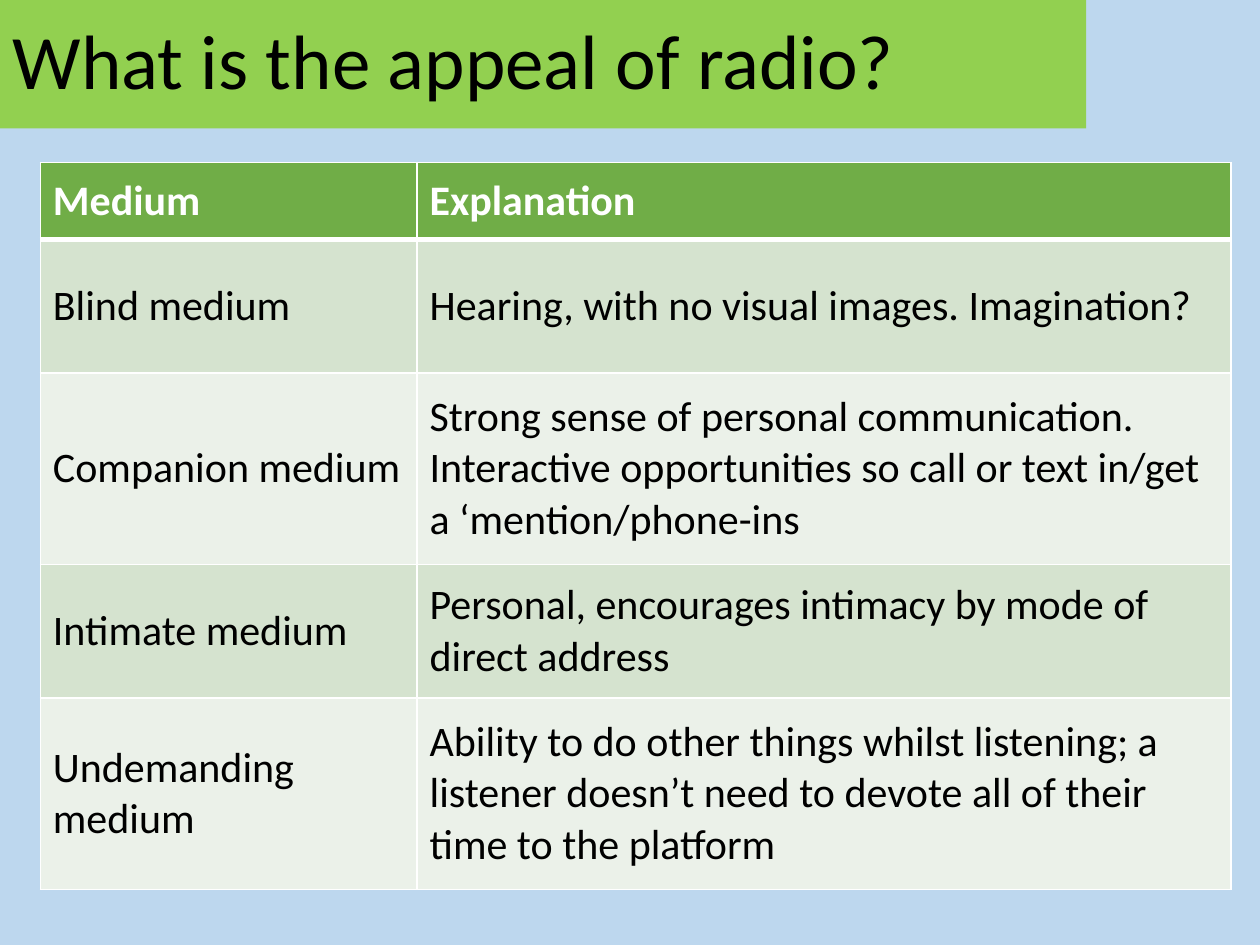
from dataclasses import dataclass

from lxml import etree
from pptx import Presentation
from pptx.dml.color import RGBColor
from pptx.enum.text import MSO_ANCHOR, MSO_AUTO_SIZE, PP_ALIGN
from pptx.oxml.ns import qn
from pptx.util import Inches, Pt

MIDDLE = MSO_ANCHOR.MIDDLE
LEFT = PP_ALIGN.LEFT
TITLE_ONLY = 5

# Content
TITLE = "What is the appeal of radio?"
ROWS = [
    ("Medium", "Explanation"),
    ("Blind medium", "Hearing, with no visual images. Imagination?"),
    ("Companion medium",
     "Strong sense of personal communication. Interactive opportunities "
     "so call or text in/get a ‘mention/phone-ins"),
    ("Intimate medium",
     "Personal, encourages intimacy by mode of direct address"),
    ("Undemanding medium",
     "Ability to do other things whilst listening; a listener doesn’t need "
     "to devote all of their time to the platform"),
]

# Layout in inches
SLIDE = (10, 7.5)
BANNER = (0, 0, 8.62, 1.02)
ORIGIN = (0.32, 1.29)
COLS = (2.99, 6.46)
SHORT, TALL = 1.06, 1.52
HEIGHTS = (0.61, SHORT, TALL, SHORT, TALL)


@dataclass(frozen=True)
class Theme:
    font: str = "Calibri"
    back: str = "BDD7EE"
    banner: str = "92D050"
    head: str = "70AD47"
    bands: tuple = ("D5E3CF", "EBF1E9")
    light: str = "FFFFFF"
    dark: str = "000000"
    title: int = 44
    body: int = 24
    thin: int = 1
    thick: int = 3


THEME = Theme()


def paint(fill, color):
    fill.solid()
    fill.fore_color.rgb = RGBColor.from_string(color)


def style(para, size, color, bold=False):
    para.alignment = LEFT
    font = para.font
    font.name, font.size, font.bold = THEME.font, Pt(size), bold
    font.color.rgb = RGBColor.from_string(color)


def edge(cell, side, width):
    line = etree.SubElement(cell._tc.get_or_add_tcPr(), qn(f"a:ln{side}"),
                            w=str(Pt(width)))
    solid = etree.SubElement(line, qn("a:solidFill"))
    etree.SubElement(solid, qn("a:srgbClr"), val=THEME.light)


def add_title(slide):
    title = slide.shapes.title
    title.left, title.top, title.width, title.height = map(Inches, BANNER)
    paint(title.fill, THEME.banner)
    frame = title.text_frame
    frame.text = TITLE
    frame.auto_size = MSO_AUTO_SIZE.NONE
    frame.vertical_anchor = MIDDLE
    para = frame.paragraphs[0]
    para.line_spacing = 0.9
    style(para, THEME.title, THEME.dark)


def add_grid(slide):
    size = (sum(COLS), sum(HEIGHTS))
    table = slide.shapes.add_table(
        len(ROWS), len(COLS), *map(Inches, ORIGIN + size)).table
    for col, width in zip(table.columns, COLS):
        col.width = Inches(width)
    for r, texts in enumerate(ROWS):
        table.rows[r].height = Inches(HEIGHTS[r])
        head = r == 0
        for c, text in enumerate(texts):
            cell = table.cell(r, c)
            # The heavy rule is shared by the header and the row below it
            for side in "LRTB":
                heavy = (r, side) in ((0, "B"), (1, "T"))
                edge(cell, side, THEME.thick if heavy else THEME.thin)
            paint(cell.fill, THEME.head if head else THEME.bands[(r - 1) % 2])
            cell.vertical_anchor = MIDDLE
            cell.text = text
            style(cell.text_frame.paragraphs[0], THEME.body,
                  THEME.light if head else THEME.dark, head)


def main():
    deck = Presentation()
    deck.slide_width, deck.slide_height = map(Inches, SLIDE)
    slide = deck.slides.add_slide(deck.slide_layouts[TITLE_ONLY])
    paint(slide.background.fill, THEME.back)
    add_title(slide)
    add_grid(slide)
    deck.save("out.pptx")


if __name__ == "__main__":
    main()
